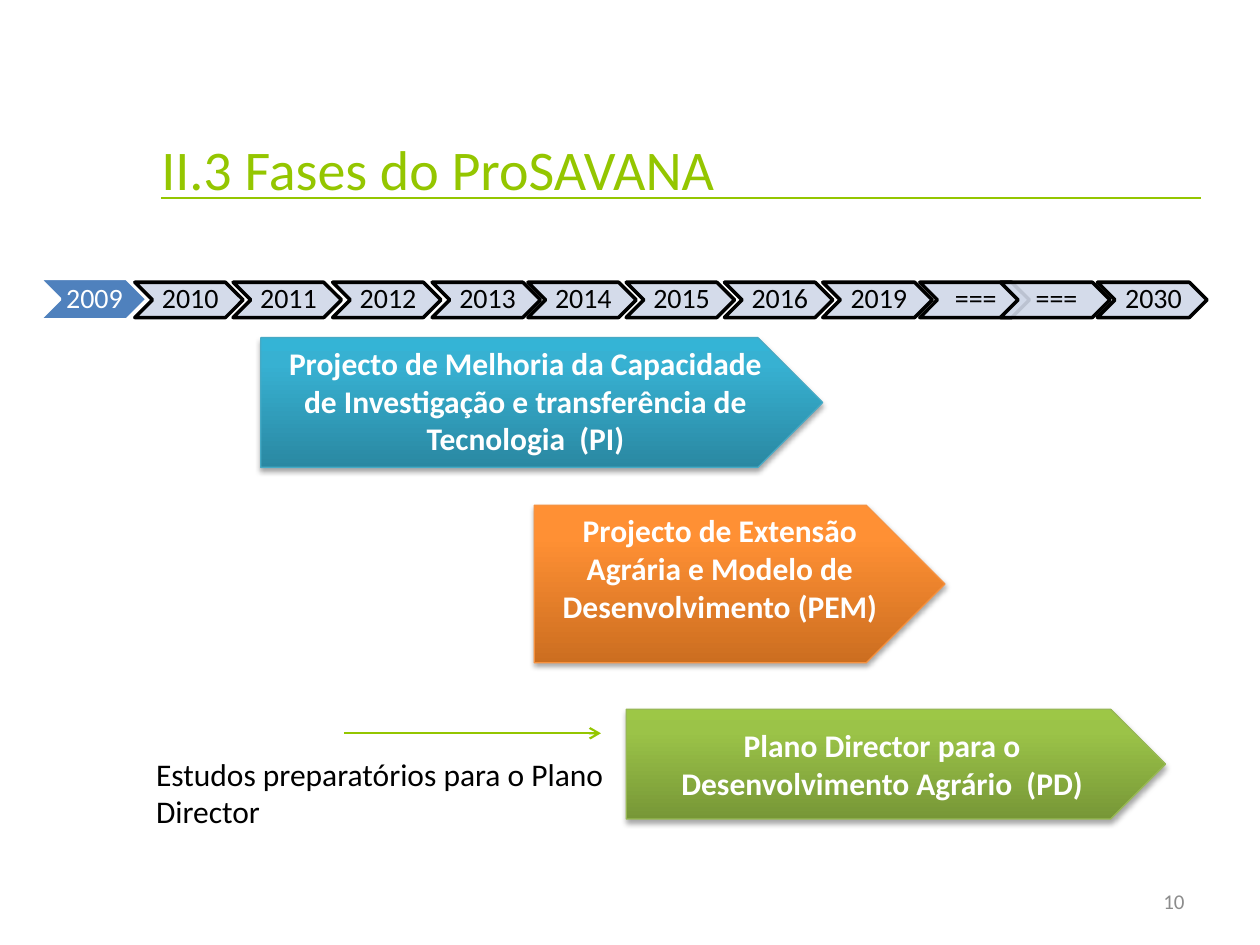
from typing import NamedTuple

from lxml.etree import SubElement
from pptx import Presentation
from pptx.dml.color import RGBColor
from pptx.enum.shapes import MSO_CONNECTOR as Conn, MSO_SHAPE as Kind
from pptx.enum.text import MSO_ANCHOR as Anchor, PP_ALIGN as Align
from pptx.oxml import parse_xml
from pptx.oxml.ns import nsdecls, qn
from pptx.util import Inches, Pt

WHITE = RGBColor(0xFF, 0xFF, 0xFF)
BLACK = RGBColor(0, 0, 0)
LIME = RGBColor(0x94, 0xC6, 0x00)
BLUE = RGBColor(0x4F, 0x81, 0xBD)
PALE = RGBColor(0xD0, 0xD8, 0xE8)
GRAY = RGBColor(0x8C, 0x8C, 0x8C)
TEAL = RGBColor(0x46, 0xAA, 0xC5)
ORANGE = RGBColor(0xF6, 0x92, 0x40)
GREEN = RGBColor(0x98, 0xB9, 0x55)
TEAL_RAMP = (RGBColor(0x2A, 0x88, 0xA2), RGBColor(0x37, 0xB1, 0xD2), RGBColor(0x34, 0xB4, 0xD6))
ORANGE_RAMP = (RGBColor(0xCC, 0x6E, 0x20), RGBColor(0xFF, 0x90, 0x34), RGBColor(0xFF, 0x91, 0x36))
GREEN_RAMP = (RGBColor(0x77, 0x97, 0x37), RGBColor(0x9B, 0xC3, 0x48), RGBColor(0x9D, 0xC7, 0x46))

FONT = "Calibri"
WIDE, HIGH = Inches(10), Inches(7.5)
COLS, ROWS = 100, 75


class Box(NamedTuple):
    """A place on the grid, in columns and rows."""
    col: float
    row: float
    cols: float
    rows: float


class Year(NamedTuple):
    text: str
    col: float
    cols: float = 8.6


class Phase(NamedTuple):
    text: str
    box: Box
    ramp: tuple[RGBColor, ...]
    edge: RGBColor
    anchor: Anchor = Anchor.TOP


YEARS = (
    Year("2010", 10.7), Year("2011", 18.5), Year("2012", 26.4), Year("2013", 34.3),
    Year("2014", 41.9), Year("2015", 49.7), Year("2016", 57.5), Year("2019", 65.3, 8.7),
    Year("===", 73, 8.7), Year("===", 79.4, 8.7), Year("2030", 87.1, 8.7),
)
PHASES = (
    Phase("Projecto de Melhoria da Capacidade de Investigação e transferência de Tecnologia  (PI)",
          Box(20.7, 26.8, 44.6, 10.3), TEAL_RAMP, TEAL),
    Phase("Projecto de Extensão Agrária e Modelo de Desenvolvimento (PEM)",
          Box(42.4, 40.1, 32.6, 12.5), ORANGE_RAMP, ORANGE),
    Phase("Plano Director para o Desenvolvimento Agrário  (PD)",
          Box(49.7, 56.3, 42.8, 8.7), GREEN_RAMP, GREEN, Anchor.MIDDLE),
)


def across(col: float) -> int:
    return round(WIDE * col / COLS)


def down(row: float) -> int:
    return round(HIGH * row / ROWS)


def place(box: Box) -> tuple[int, int, int, int]:
    return across(box.col), down(box.row), across(box.cols), down(box.rows)


def write(shape, text: str, size: float, color: RGBColor, align=Align.LEFT,
          anchor=Anchor.TOP, bold: bool = False):
    frame = shape.text_frame
    frame.word_wrap = True
    frame.vertical_anchor = anchor
    para = frame.paragraphs[0]
    para.alignment = align
    run = para.add_run()
    run.text = text
    font = run.font
    font.name, font.size, font.bold = FONT, Pt(size), bold
    font.color.rgb = color
    return frame


def add_label(slide, box: Box, text: str, size: float, color: RGBColor, **style) -> None:
    write(slide.shapes.add_textbox(*place(box)), text, size, color, **style)


def add_line(slide, start: float, end: float, row: float, arrow: bool = False) -> None:
    line = slide.shapes.add_connector(
        Conn.STRAIGHT, across(start), down(row), across(end), down(row))
    line.line.color.rgb = LIME
    line.line.width = Pt(1.25)
    if arrow:
        SubElement(line.line._get_or_add_ln(), qn("a:tailEnd"), type="arrow")
    SubElement(line._element.spPr, qn("a:effectLst"))


def add_year(slide, text: str, box: Box, fill: RGBColor, edge: RGBColor,
             ink: RGBColor, alpha: int = 100) -> None:
    shape = slide.shapes.add_shape(Kind.CHEVRON, *place(box))
    shape.shadow.inherit = False
    shape.fill.solid()
    shape.fill.fore_color.rgb = fill
    if alpha < 100:
        tone = shape._element.spPr.find(f"{qn('a:solidFill')}/{qn('a:srgbClr')}")
        SubElement(tone, qn("a:alpha"), val=str(alpha * 1000))
    shape.line.color.rgb = edge
    shape.line.width = Pt(2)
    frame = write(shape, text, 16, ink, Align.CENTER, Anchor.MIDDLE)
    frame.margin_left, frame.margin_right = across(0.2), 0
    frame.margin_top = frame.margin_bottom = down(0.1)
    frame.paragraphs[0].line_spacing = 0.9


def add_phase(slide, phase: Phase) -> None:
    shape = slide.shapes.add_shape(Kind.PENTAGON, *place(phase.box))
    shape.line.color.rgb = phase.edge
    shape.line.width = Pt(0.75)
    stops = "".join(f'<a:gs pos="{pos * 1000}"><a:srgbClr val="{tone}"/></a:gs>'
                    for pos, tone in zip((0, 80, 100), phase.ramp))
    props = shape._element.spPr
    props.find(qn("a:prstGeom")).addnext(parse_xml(
        f'<a:gradFill {nsdecls("a")} rotWithShape="1"><a:gsLst>{stops}</a:gsLst>'
        '<a:lin ang="16200000" scaled="0"/></a:gradFill>'))
    props.append(parse_xml(
        f'<a:effectLst {nsdecls("a")}><a:outerShdw blurRad="{Pt(3.1)}" dist="{Pt(1.8)}" '
        f'dir="5400000" rotWithShape="0"><a:srgbClr val="{BLACK}"><a:alpha val="35000"/>'
        '</a:srgbClr></a:outerShdw></a:effectLst>'))
    write(shape, phase.text, 18, WHITE, Align.CENTER, phase.anchor, bold=True)


def main() -> None:
    deck = Presentation()
    deck.slide_width, deck.slide_height = WIDE, HIGH
    slide = deck.slides.add_slide(deck.slide_layouts[5])

    title = slide.shapes.title
    title.left, title.top, title.width, title.height = place(Box(11.8, 4, 76.8, 12.5))
    write(title, "II.3 Fases do ProSAVANA", 32, LIME, anchor=Anchor.BOTTOM)
    add_line(slide, 12.8, 95.3, 15.7)

    add_year(slide, "2009", Box(3.1, 22.1, 8.6, 3.3), BLUE, WHITE, WHITE)
    for year in YEARS:
        add_year(slide, year.text, Box(year.col, 22.4, year.cols, 2.8),
                 PALE, BLACK, BLACK, alpha=90)
    for phase in PHASES:
        add_phase(slide, phase)

    add_label(slide, Box(11.4, 59.4, 40.3, 7.1),
              "Estudos preparatórios para o Plano Director", 18, BLACK)
    add_line(slide, 27.3, 47.7, 58.2, arrow=True)
    add_label(slide, Box(71.7, 69.5, 23.3, 4), "10", 12, GRAY,
              align=Align.RIGHT, anchor=Anchor.MIDDLE)
    deck.save("out.pptx")


if __name__ == "__main__":
    main()
